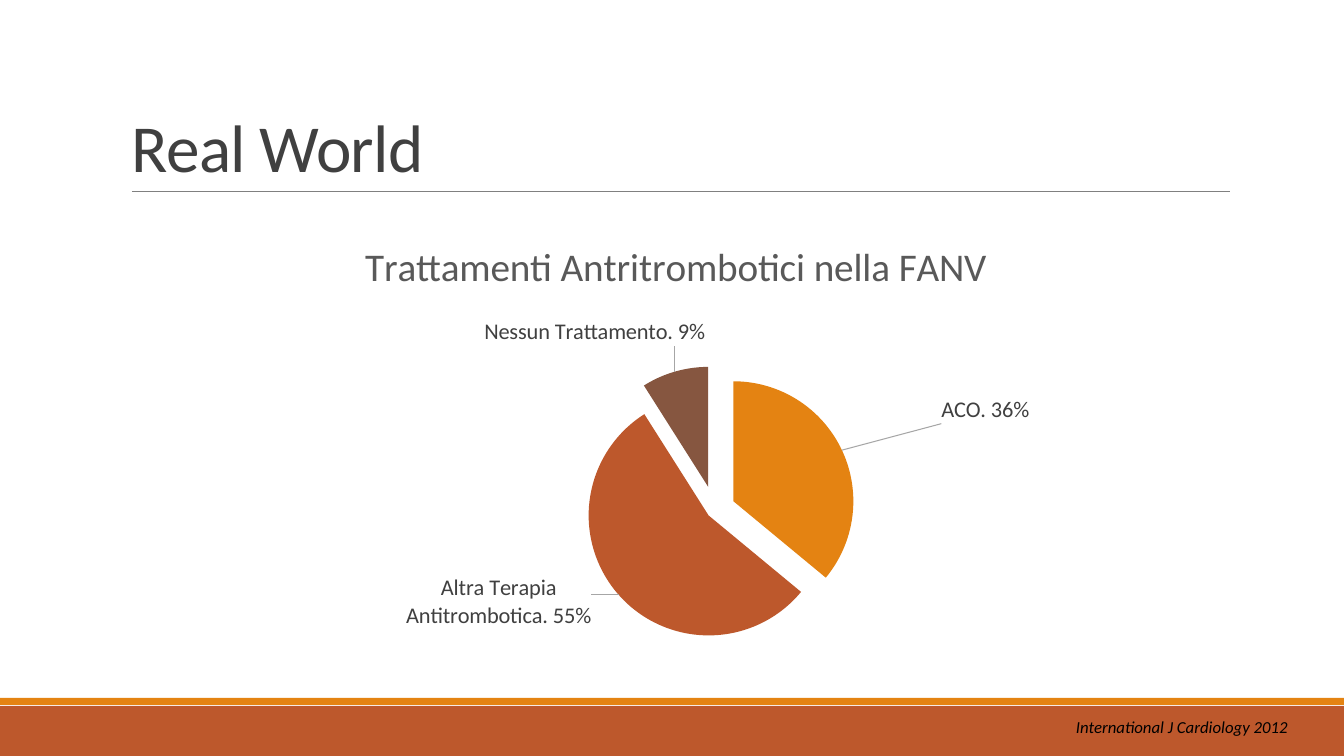
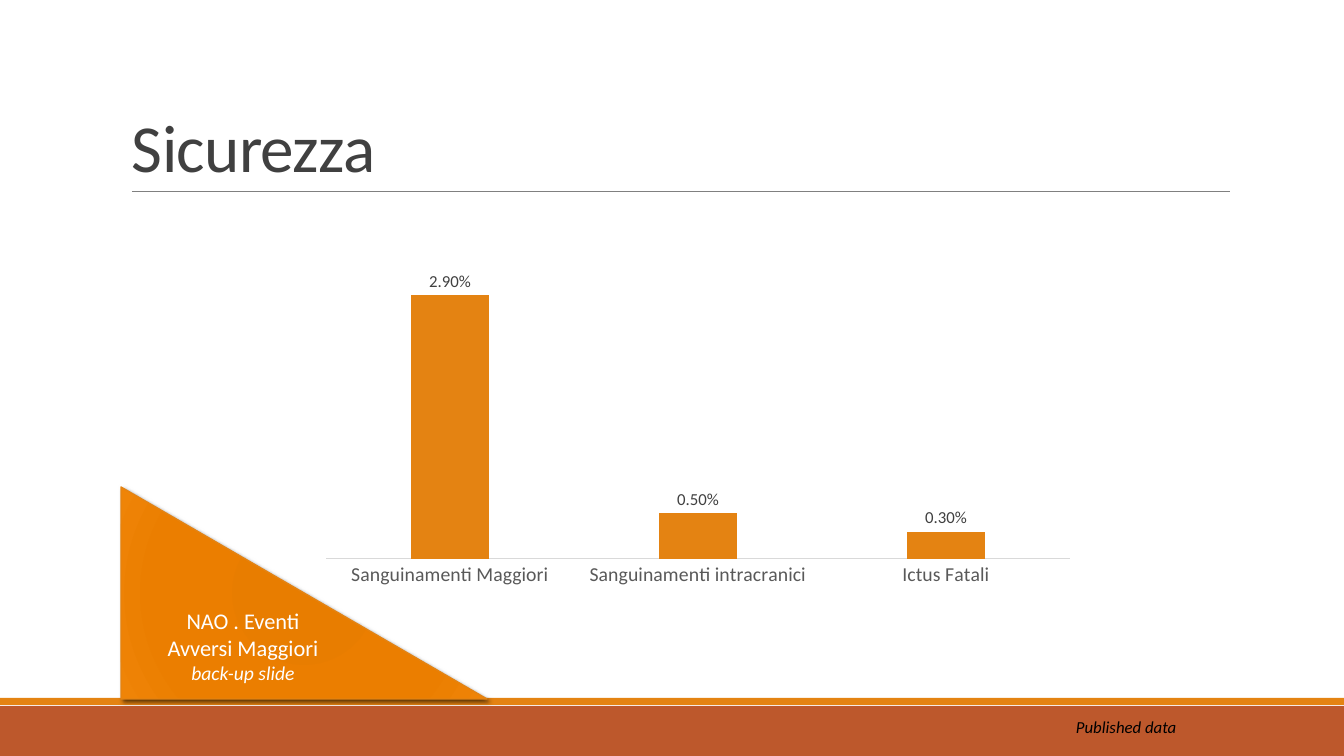
from dataclasses import dataclass

from lxml import etree
from pptx import Presentation
from pptx.chart.data import CategoryChartData
from pptx.dml.color import RGBColor
from pptx.enum.chart import XL_CHART_TYPE, XL_LABEL_POSITION, XL_TICK_MARK
from pptx.enum.shapes import MSO_CONNECTOR, MSO_SHAPE
from pptx.enum.text import MSO_ANCHOR, PP_ALIGN
from pptx.oxml import parse_xml
from pptx.oxml.ns import qn
from pptx.util import Pt

PIE, COLUMN = XL_CHART_TYPE.PIE, XL_CHART_TYPE.COLUMN_CLUSTERED
OUTSIDE_END, NO_TICK = XL_LABEL_POSITION.OUTSIDE_END, XL_TICK_MARK.NONE
RECTANGLE, RIGHT_TRIANGLE = MSO_SHAPE.RECTANGLE, MSO_SHAPE.RIGHT_TRIANGLE
STRAIGHT = MSO_CONNECTOR.STRAIGHT
MIDDLE, BOTTOM = MSO_ANCHOR.MIDDLE, MSO_ANCHOR.BOTTOM
CENTER = PP_ALIGN.CENTER

SLIDE_W, SLIDE_H = 1344, 756
SCALE = 12192000 / SLIDE_W
A_NS = 'xmlns:a="http://schemas.openxmlformats.org/drawingml/2006/main"'
C_NS = 'xmlns:c="http://schemas.openxmlformats.org/drawingml/2006/chart"'
C15_NS = 'xmlns:c15="http://schemas.microsoft.com/office/drawing/2012/chart"'


@dataclass(frozen=True)
class Theme:
    font: str = "Calibri"
    orange: str = "E48312"
    rust: str = "BD582C"
    brown: str = "865640"
    dark: str = "404040"
    gray: str = "595959"
    rule: str = "808080"
    leader: str = "A6A6A6"
    axis: str = "D9D9D9"
    black: str = "000000"
    white: str = "FFFFFF"
    title_size: float = 48
    chart_title_size: float = 28
    label_size: float = 16
    axis_size: float = 14.1
    note_size: float = 14
    small_size: float = 12
    chart_size: float = 10


THEME = Theme()

TREATMENTS = {
    "title": "Real World",
    "source": "International J Cardiology 2012",
    "source_width": 235,
    "heading": "Trattamenti Antritrombotici nella FANV",
    "heading_at": (358, 233),
    "box": (121, 226, 1109, 466),
    "plot": (595, 390, 240, 240),
    "label_size": (205, 58),
    "slices": [
        ("ACO", 0.36, THEME.orange, 17, (94, -24)),
        ("Altra Terapia Antitrombotica", 0.55, THEME.rust, 7, (-23, -24)),
        ("Nessun Trattamento", 0.09, THEME.brown, 20, (32, -20)),
    ],
}

SAFETY = {
    "title": "Sicurezza",
    "source": "Published data",
    "source_width": 122,
    "box": (310, 233, 774, 361),
    "plot": (326, 241, 744, 318),
    "events": [
        ("Sanguinamenti Maggiori", 0.029),
        ("Sanguinamenti intracranici", 0.005),
        ("Ictus Fatali", 0.003),
    ],
    "corner_box": (121, 487, 366, 212),
    "corner": [
        ("NAO . Eventi Avversi Maggiori", THEME.label_size, False),
        ("back-up slide", THEME.note_size, True),
    ],
    "corner_stops": [(0, "E57B00"), (34, "E87D00"), (70, "EB7E00"), (100, "EF8407")],
}


def px(*lengths):
    return [round(length * SCALE) for length in lengths]


def rgb(color):
    return RGBColor.from_string(color)


def style(font, size, color, italic=False):
    font.name, font.size = THEME.font, Pt(size)
    font.bold, font.italic = False, italic
    font.color.rgb = rgb(color)


def add_band(slide, top, height, color):
    band = slide.shapes.add_shape(RECTANGLE, *px(0, top, SLIDE_W, height))
    band.shadow.inherit = False
    band.fill.solid()
    band.fill.fore_color.rgb = rgb(color)
    band.line.fill.background()


def add_text(slide, box, text, size, color, wrap=True, italic=False):
    frame = slide.shapes.add_textbox(*px(*box)).text_frame
    frame.word_wrap = wrap
    frame.text = text
    style(frame.paragraphs[0].runs[0].font, size, color, italic)
    return frame


def start_slide(prs, content):
    slide = prs.slides.add_slide(prs.slide_layouts[6])
    add_band(slide, 706, 50, THEME.rust)
    add_band(slide, 698, 7, THEME.orange)
    rule = slide.shapes.add_connector(STRAIGHT, *px(132, 191, 1230, 191))
    rule.line.color.rgb = rgb(THEME.rule)
    rule.line.width = Pt(0.5)
    etree.SubElement(rule._element.spPr, qn("a:effectLst"))
    frame = add_text(slide, (122, 31, 1109, 160), content["title"],
                     THEME.title_size, THEME.dark)
    frame.vertical_anchor = BOTTOM
    title = frame.paragraphs[0]
    title.line_spacing = 0.85
    title.runs[0].font._element.set("spc", "-50")
    return slide


def add_source(slide, content):
    add_text(slide, (1066, 712, content["source_width"], 30), content["source"],
             THEME.small_size, THEME.black, wrap=False, italic=True)


def add_chart(slide, kind, content, rows, number_format):
    data = CategoryChartData(number_format=number_format)
    data.categories = [row[0] for row in rows]
    data.add_series("Series 1", [row[1] for row in rows])
    chart = slide.shapes.add_chart(kind, *px(*content["box"]), data).chart
    style(chart.font, THEME.chart_size, THEME.black)
    chart.has_legend = False
    chart.plots[0].vary_by_categories = kind == PIE
    place(chart._chartSpace.chart.plotArea, 0, content["box"], content["plot"])
    return chart


def manual_layout(fields):
    inner = "".join(f'<c:{tag} val="{value}"/>' for tag, value in fields)
    return f"<c:manualLayout>{inner}</c:manualLayout>"


def layout_xml(fields):
    return f"<c:layout {C_NS}>{manual_layout(fields)}</c:layout>"


def place(parent, index, chart_box, part):
    left, top, width, height = chart_box
    fields = [("xMode", "edge"), ("yMode", "edge"),
              ("x", round((part[0] - left) / width, 4)),
              ("y", round((part[1] - top) / height, 4))]
    if len(part) == 4:
        fields = [("layoutTarget", "inner"), *fields,
                  ("w", round(part[2] / width, 4)),
                  ("h", round(part[3] / height, 4))]
    for old in parent.findall(qn("c:layout")):
        parent.remove(old)
    parent.insert(index, parse_xml(layout_xml(fields)))


def pie_labels(content):
    width, height = content["box"][2:]
    label_w, label_h = content["label_size"]
    shows = "".join(
        f'<c:show{part} val="{int(part in ("Val", "CatName"))}"/>'
        for part in ("LegendKey", "Val", "CatName", "SerName", "Percent", "BubbleSize"))
    look = (
        '<c:numFmt formatCode="0%" sourceLinked="0"/>'
        '<c:spPr><a:noFill/><a:ln><a:noFill/></a:ln></c:spPr>'
        f'<c:txPr><a:bodyPr/><a:p><a:pPr><a:defRPr sz="{THEME.label_size * 100}">'
        f'<a:solidFill><a:srgbClr val="{THEME.dark}"/></a:solidFill>'
        f'<a:latin typeface="{THEME.font}"/></a:defRPr></a:pPr>'
        '<a:endParaRPr lang="it-IT"/></a:p></c:txPr>'
        f'<c:dLblPos val="outEnd"/>{shows}<c:separator>. </c:separator>')
    size = manual_layout([("w", round(label_w / width, 4)),
                          ("h", round(label_h / height, 4))])
    wrapped = (f'<c:extLst><c:ext uri="{{CE6537A1-D6FC-4f65-9D91-7224C49458BB}}" {C15_NS}>'
               f'<c15:layout>{size}</c15:layout></c:ext></c:extLst>')
    labels = ""
    for index, (name, *_, (dx, dy)) in enumerate(content["slices"]):
        offset = layout_xml([("x", round(dx / width, 4)), ("y", round(dy / height, 4))])
        extent = wrapped if " " in name else ""
        labels += f'<c:dLbl><c:idx val="{index}"/>{offset}{look}{extent}</c:dLbl>'
    return parse_xml(
        f'<c:dLbls {C_NS} {A_NS}>{labels}{look}<c:showLeaderLines val="1"/>'
        '<c:leaderLines><c:spPr><a:ln w="9525"><a:solidFill>'
        f'<a:srgbClr val="{THEME.leader}"/></a:solidFill></a:ln></c:spPr>'
        '</c:leaderLines></c:dLbls>')


def build_treatments(prs, content):
    slide = start_slide(prs, content)
    chart = add_chart(slide, PIE, content, content["slices"], "0%")
    chart.has_title = True
    heading = chart.chart_title
    heading.text_frame.text = content["heading"]
    style(heading.text_frame.paragraphs[0].runs[0].font,
          THEME.chart_title_size, THEME.gray)
    heading.include_in_layout = False
    place(heading._element, 1, content["box"], content["heading_at"])
    series = chart.plots[0].series[0]
    for index, (_, _, color, explosion, _) in enumerate(content["slices"]):
        look = series.points[index].format
        look.fill.solid()
        look.fill.fore_color.rgb = rgb(color)
        look.line.fill.background()
        point = series._element.findall(qn("c:dPt"))[index]
        point.find(qn("c:spPr")).addprevious(
            parse_xml(f'<c:explosion {C_NS} val="{explosion}"/>'))
    labels = series.data_labels._element
    labels.getparent().replace(labels, pie_labels(content))
    add_source(slide, content)


def add_corner(slide, content):
    corner = slide.shapes.add_shape(RIGHT_TRIANGLE, *px(*content["corner_box"]))
    stops = "".join(f'<a:gs pos="{stop * 1000}"><a:srgbClr val="{color}"/></a:gs>'
                    for stop, color in content["corner_stops"])
    corner._element.spPr.insert(2, parse_xml(
        f'<a:gradFill {A_NS} rotWithShape="1"><a:gsLst>{stops}</a:gsLst>'
        '<a:path path="circle"><a:fillToRect l="100000" t="100000" '
        'r="100000" b="100000"/></a:path></a:gradFill>'))
    corner.line.color.rgb = rgb(THEME.orange)
    corner.line.width = Pt(1)
    corner.shadow.inherit = False
    corner._element.spPr.find(qn("a:effectLst")).append(parse_xml(
        f'<a:outerShdw {A_NS} blurRad="38100" dist="25400" dir="2700000" '
        f'rotWithShape="0"><a:srgbClr val="{THEME.black}"><a:alpha val="60000"/>'
        '</a:srgbClr></a:outerShdw>'))
    frame = corner.text_frame
    frame.word_wrap = True
    frame.vertical_anchor = MIDDLE
    frame.text = "\n".join(line[0] for line in content["corner"])
    for paragraph, (_, size, italic) in zip(frame.paragraphs, content["corner"]):
        paragraph.alignment = CENTER
        style(paragraph.runs[0].font, size, THEME.white, italic)


def build_safety(prs, content):
    slide = start_slide(prs, content)
    chart = add_chart(slide, COLUMN, content, content["events"], "0.00%")
    chart.has_title = False
    plot = chart.plots[0]
    plot.gap_width, plot.overlap = 219, -27
    fill = plot.series[0].format.fill
    fill.solid()
    fill.fore_color.rgb = rgb(THEME.orange)
    plot.has_data_labels = True
    labels = plot.data_labels
    labels.show_value = True
    labels.position = OUTSIDE_END
    labels.number_format, labels.number_format_is_linked = "0.00%", False
    style(labels.font, THEME.small_size, THEME.dark)
    events, rates = chart.category_axis, chart.value_axis
    events.major_tick_mark = NO_TICK
    style(events.tick_labels.font, THEME.axis_size, THEME.gray)
    events.format.line.color.rgb = rgb(THEME.axis)
    events.format.line.width = Pt(0.75)
    rates.minimum_scale, rates.maximum_scale = 0, 0.035
    rates.has_major_gridlines = False
    rates.visible = False
    add_corner(slide, content)
    add_source(slide, content)


def main():
    prs = Presentation()
    prs.slide_width, prs.slide_height = px(SLIDE_W, SLIDE_H)
    build_treatments(prs, TREATMENTS)
    build_safety(prs, SAFETY)
    prs.save("out.pptx")


if __name__ == "__main__":
    main()
